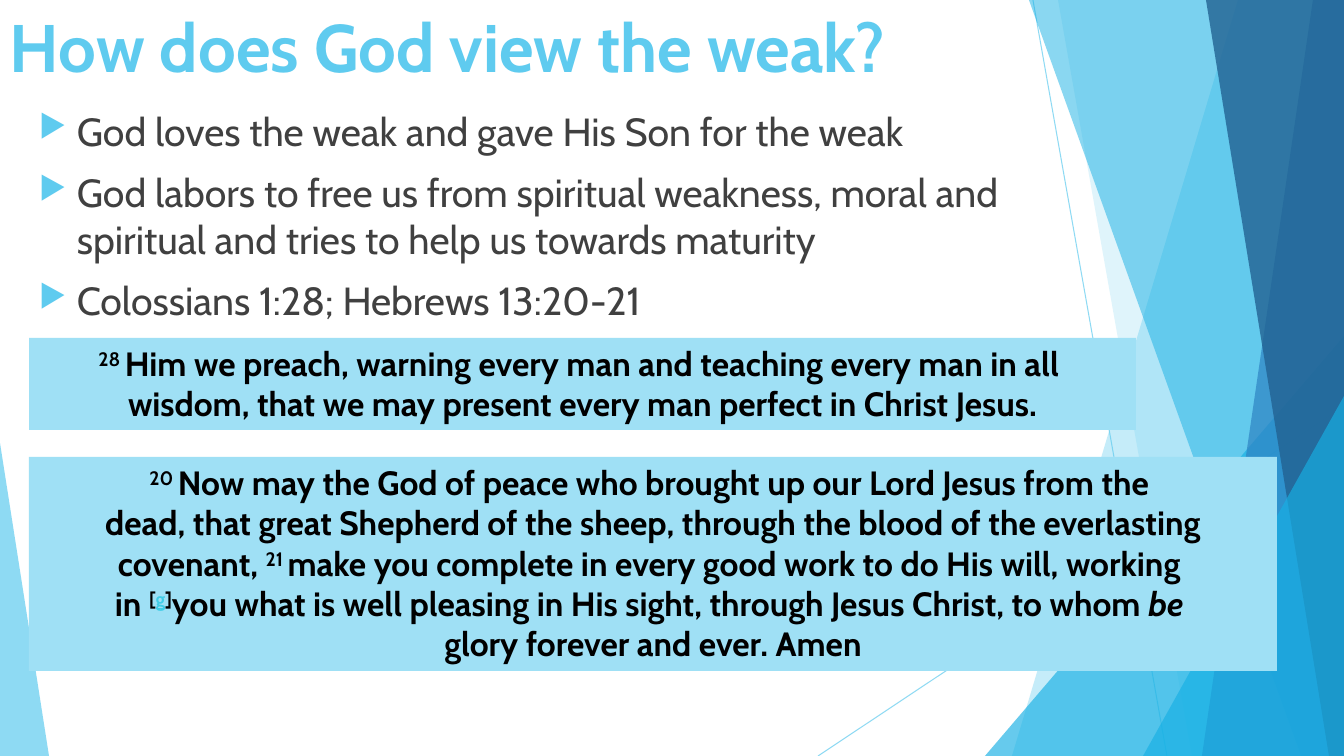
from dataclasses import dataclass, field

from lxml.etree import SubElement
from pptx import Presentation
from pptx.dml.color import RGBColor
from pptx.enum.shapes import MSO_CONNECTOR, MSO_SHAPE
from pptx.enum.text import MSO_ANCHOR, MSO_AUTO_SIZE, PP_ALIGN
from pptx.oxml.ns import qn
from pptx.util import Emu, Pt

PX = 914400 / 100.8
WIDTH, HEIGHT = 1344, 756


@dataclass(frozen=True)
class Theme:
    font: str = "Cabin"
    sky: str = "5FCBEF"
    cyan: str = "17B0E4"
    blue: str = "2E83C3"
    navy: str = "226292"
    panel: str = "9FE0F5"
    body: str = "404040"
    verse: str = "000000"
    footnote: str = "3FCDE7"
    title_size: int = 48
    body_size: int = 28
    verse_size: int = 24


THEME = Theme()


@dataclass(frozen=True)
class Ray:
    start: tuple[int, int]
    end: tuple[int, int]


@dataclass(frozen=True)
class Band:
    """A facet that runs from its slanted left edge to the slide's right edge."""
    top_x: int
    bottom_x: int
    color: str
    opacity: int


@dataclass(frozen=True)
class Wedge:
    """A triangle whose apex lies at the given share of its width."""
    box: tuple[int, int, int, int]
    apex: float
    color: str
    opacity: int


@dataclass(frozen=True)
class Span:
    text: str
    raised: bool = False
    color: str = THEME.verse
    style: dict = field(default_factory=dict)


@dataclass(frozen=True)
class Panel:
    box: tuple[int, int, int, int]
    wrap: bool
    lines: list[list[Span]]


RAYS = [Ray((1033, 0), (1167, HEIGHT)), Ray((WIDTH, 406), (818, HEIGHT))]
FACETS = [
    Band(1238, 1012, THEME.sky, 36),
    Band(1058, 1192, THEME.sky, 20),
    Wedge((985, 336, 359, 420), 1, THEME.cyan, 66),
    Band(1029, 1301, THEME.cyan, 50),
    Band(1313, 1202, THEME.blue, 70),
    Band(1206, 1329, THEME.navy, 80),
    Wedge((1143, 396, 201, 360), 1, THEME.cyan, 66),
    Wedge((0, 443, 49, 313), 0, THEME.sky, 70),
]
TITLE = "How does God view the weak?"
POINTS = [
    "God loves the weak and gave His Son for the weak",
    "God labors to free us from spiritual weakness, moral and spiritual "
    "and tries to help us towards maturity",
    "Colossians 1:28; Hebrews 13:20-21",
]
PANELS = [
    Panel((29, 338, 1107, 92), False, [
        [Span("28 ", raised=True),
         Span("Him we preach, warning every man and teaching every man in all ")],
        [Span("wisdom, that we may present every man perfect in Christ Jesus.")],
    ]),
    Panel((29, 457, 1248, 214), True, [
        [Span("20 ", raised=True),
         Span("Now may the God of peace who brought up our Lord Jesus from the ")],
        [Span("dead, that great Shepherd of the sheep, through the blood of "
              "the everlasting covenant, "),
         Span("21 ", raised=True),
         Span("make you complete in every good work to do His will, working ")],
        [Span("in "),
         Span("[", raised=True),
         Span("g", raised=True, color=THEME.footnote, style={"underline": True}),
         Span("]", raised=True),
         Span("you what is well pleasing in His sight, through Jesus Christ, to whom "),
         Span("be ", style={"italic": True})],
        [Span("glory forever and ever. Amen")],
    ]),
]


def px(*lengths: int) -> list[Emu]:
    return [Emu(round(n * PX)) for n in lengths]


def set_values(target, values: dict) -> None:
    for name, value in values.items():
        setattr(target, name, value)


def set_opacity(fill, percent: int) -> None:
    color = fill._xPr.find(f"{qn('a:solidFill')}/{qn('a:srgbClr')}")
    SubElement(color, qn("a:alpha"), val=str(percent * 1000))


def paint(sp, color: str, opacity: int = 100) -> None:
    sp.shadow.inherit = False
    sp.line.fill.background()
    sp.fill.solid()
    sp.fill.fore_color.rgb = RGBColor.from_string(color)
    if opacity < 100:
        set_opacity(sp.fill, opacity)


def add_run(p, text: str, size: int, color: str, **style):
    r = p.add_run()
    r.text = text
    set_values(r.font, {"name": THEME.font, "size": Pt(size), **style})
    r.font.color.rgb = RGBColor.from_string(color)
    return r


def add_ray(s, ray: Ray) -> None:
    line = s.shapes.add_connector(MSO_CONNECTOR.STRAIGHT, *px(*ray.start, *ray.end))
    line.line.width = Pt(0.75)
    line.line.color.rgb = RGBColor.from_string(THEME.sky)
    set_opacity(line.line.fill, 70)
    SubElement(line._element.spPr, qn("a:effectLst"))


def add_facet(s, facet: Band | Wedge) -> None:
    if isinstance(facet, Band):
        outline = s.shapes.build_freeform(facet.top_x, 0, scale=PX)
        outline.add_line_segments(
            [(WIDTH, 0), (WIDTH, HEIGHT), (facet.bottom_x, HEIGHT)], close=True)
        sp = outline.convert_to_shape()
    else:
        sp = s.shapes.add_shape(MSO_SHAPE.ISOSCELES_TRIANGLE, *px(*facet.box))
        sp.adjustments[0] = facet.apex
    paint(sp, facet.color, facet.opacity)


def add_title(s) -> None:
    tf = s.shapes.add_textbox(*px(0, 0, 974, 102)).text_frame
    tf.word_wrap = True
    add_run(tf.paragraphs[0], TITLE, THEME.title_size, THEME.sky, bold=True)


def add_points(s) -> None:
    tf = s.shapes.add_textbox(*px(29, 102, 993, 563)).text_frame
    tf.word_wrap = True
    indent = px(38)[0]
    for i, text in enumerate(POINTS):
        p = tf.add_paragraph() if i else tf.paragraphs[0]
        p.space_before = Pt(10)
        pPr = p._p.get_or_add_pPr()
        pPr.set("marL", str(indent))
        pPr.set("indent", str(-indent))
        SubElement(SubElement(pPr, qn("a:buClr")), qn("a:srgbClr"), val=THEME.sky)
        SubElement(pPr, qn("a:buSzPct"), val="80000")
        SubElement(pPr, qn("a:buChar"), char="▶")
        add_run(p, text, THEME.body_size, THEME.body)


def add_panel(s, panel: Panel) -> None:
    sp = s.shapes.add_shape(MSO_SHAPE.RECTANGLE, *px(*panel.box))
    paint(sp, THEME.panel)
    tf = sp.text_frame
    set_values(tf, {"word_wrap": panel.wrap, "vertical_anchor": MSO_ANCHOR.TOP,
                    "auto_size": MSO_AUTO_SIZE.SHAPE_TO_FIT_TEXT})
    for i, spans in enumerate(panel.lines):
        p = tf.add_paragraph() if i else tf.paragraphs[0]
        p.alignment = PP_ALIGN.CENTER
        for span in spans:
            r = add_run(p, span.text, THEME.verse_size, span.color, bold=True, **span.style)
            if span.raised:
                r.font._element.set("baseline", "30000")


def main() -> None:
    prs = Presentation()
    prs.slide_width, prs.slide_height = px(WIDTH, HEIGHT)
    s = prs.slides.add_slide(prs.slide_layouts[6])
    for ray in RAYS:
        add_ray(s, ray)
    for facet in FACETS:
        add_facet(s, facet)
    add_title(s)
    add_points(s)
    for panel in PANELS:
        add_panel(s, panel)
    prs.save("out.pptx")


if __name__ == "__main__":
    main()
